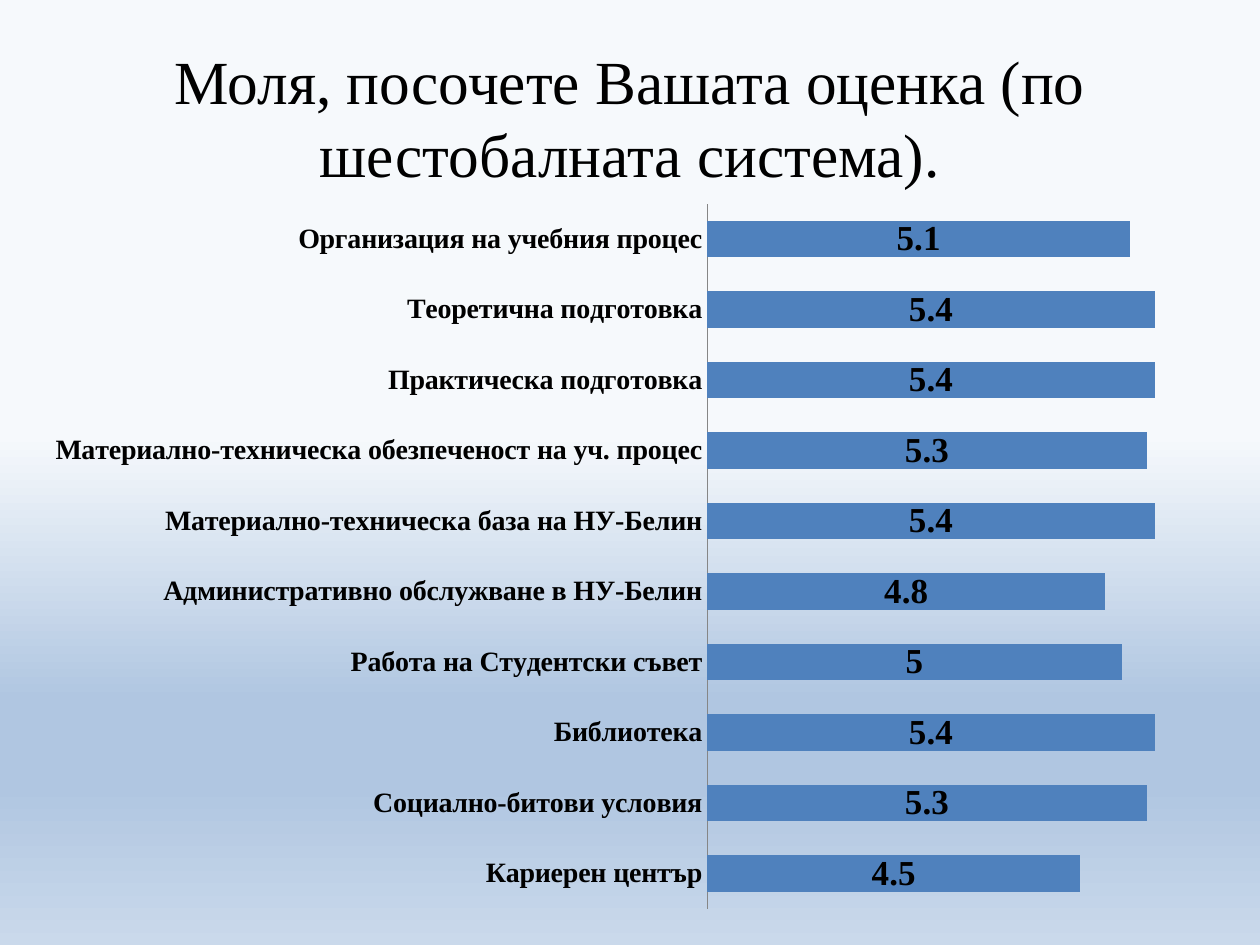
import pptx
import pptx.util
import pptx.chart.data
import pptx.dml.color
import pptx.enum.chart
import pptx.enum.text
import pptx.oxml
import pptx.oxml.ns
from copy import deepcopy
from dataclasses import dataclass

Cm = pptx.util.Cm
qn = pptx.oxml.ns.qn


@dataclass(frozen=True)
class Theme:
    face: str = "Times New Roman"
    base: str = "Calibri"
    ink: str = "000000"
    bar: str = "4F81BD"
    axis: str = "868686"
    stops: tuple = ((46, "F6F9FC"), (74, "B0C6E1"), (83, "B0C6E1"), (100, "CAD9EB"))
    title: int = 35
    label: int = 20
    body: int = 18
    tick: int = 16


THEME = Theme()

SCORES = (
    ("Кариерен център", 4.5),
    ("Социално-битови условия", 5.3),
    ("Библиотека", 5.4),
    ("Работа на Студентски съвет", 5),
    ("Административно обслужване в НУ-Белин", 4.8),
    ("Материално-техническа база на НУ-Белин", 5.4),
    ("Материално-техническа обезпеченост на уч. процес", 5.3),
    ("Практическа подготовка", 5.4),
    ("Теоретична подготовка", 5.4),
    ("Организация на учебния процес", 5.1),
)


def rgb(code):
    return pptx.dml.color.RGBColor.from_string(code)


def style(font, size, face=THEME.face, bold=False):
    font.name = face
    font.size = pptx.util.Pt(size)
    font.bold = bold
    font.color.rgb = rgb(THEME.ink)


def write(frame, text, size, align, anchor, **looks):
    frame.word_wrap = True
    frame.auto_size = pptx.enum.text.MSO_AUTO_SIZE.NONE
    frame.vertical_anchor = anchor
    para = frame.paragraphs[0]
    para.alignment = align
    run = para.add_run()
    run.text = text
    style(run.font, size, **looks)


def paint(slide):
    fill = slide.background.fill
    fill.gradient()
    fill.gradient_angle = 270
    stops = slide.element.find(".//" + qn("a:gsLst"))
    first = stops[0]
    for _ in THEME.stops[len(stops):]:
        stops.append(deepcopy(first))
    for stop, (place, code) in zip(fill.gradient_stops, THEME.stops):
        stop.position = place / 100
        stop.color.rgb = rgb(code)


def head(slide, text):
    shape = slide.shapes.title
    shape.left, shape.top = Cm(1.27), Cm(0.76)
    shape.width, shape.height = Cm(22.86), Cm(3.18)
    write(shape.text_frame, text, THEME.title,
          pptx.enum.text.PP_ALIGN.CENTER, pptx.enum.text.MSO_ANCHOR.MIDDLE)


def place(chart, **box):
    area = chart.element.find(".//" + qn("c:plotArea"))
    for old in area.findall(qn("c:layout")):
        area.remove(old)
    parts = "".join(f'<c:{key} val="{val}"/>' for key, val in box.items())
    area.insert(0, pptx.oxml.parse_xml(
        f'<c:layout {pptx.oxml.ns.nsdecls("c")}><c:manualLayout>'
        '<c:layoutTarget val="inner"/><c:xMode val="edge"/><c:yMode val="edge"/>'
        f'{parts}</c:manualLayout></c:layout>'))


def bars(slide, scores):
    kinds = pptx.enum.chart
    data = pptx.chart.data.CategoryChartData()
    data.categories = [name for name, _ in scores]
    data.add_series("Series 1", [score for _, score in scores])
    wide = Cm(24.13)
    chart = slide.shapes.add_chart(
        kinds.XL_CHART_TYPE.BAR_STACKED,
        Cm(0.64), Cm(3.81), wide, Cm(14.81), data).chart
    chart.has_legend = chart.has_title = False
    style(chart.font, THEME.body, face=THEME.base)
    place(chart, x=Cm(13.62) / wide, y=0.02, w=Cm(10.03) / wide, h=0.96)

    names = chart.category_axis
    names.major_tick_mark = names.minor_tick_mark = kinds.XL_TICK_MARK.NONE
    names.has_major_gridlines = False
    names.format.line.color.rgb = rgb(THEME.axis)
    names.format.line.width = pptx.util.Pt(0.25)
    style(names.tick_labels.font, THEME.tick, bold=True)

    scale = chart.value_axis
    scale.visible = scale.has_major_gridlines = False
    scale.minimum_scale, scale.maximum_scale = 0, 6

    plot = chart.plots[0]
    plot.gap_width, plot.overlap = 95, 100
    plot.vary_by_categories = False
    series = plot.series[0]
    series.format.fill.solid()
    series.format.fill.fore_color.rgb = rgb(THEME.bar)
    labels = series.data_labels
    labels.show_value = True
    labels.position = kinds.XL_LABEL_POSITION.CENTER
    style(labels.font, THEME.label, bold=True)


def main():
    deck = pptx.Presentation()
    deck.slide_width, deck.slide_height = Cm(25.4), Cm(19.05)
    slide = deck.slides.add_slide(deck.slide_layouts[5])
    paint(slide)
    head(slide, "Моля, посочете Вашата оценка (по шестобалната система).")
    bars(slide, SCORES)
    deck.save("out.pptx")


if __name__ == "__main__":
    main()
